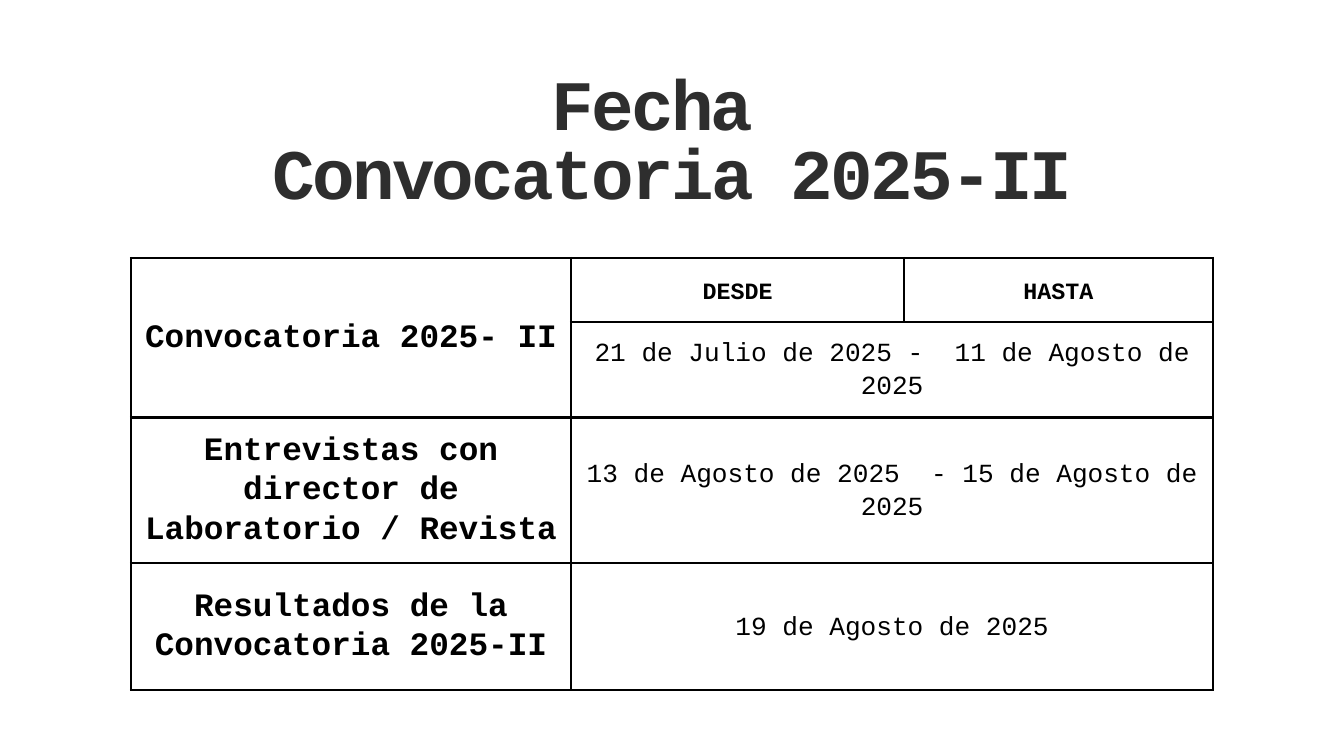
from lxml import etree
from pptx import Presentation
from pptx import util as u
from pptx.dml.color import RGBColor
from pptx.enum import text
from pptx.oxml.ns import qn

TITLE = ["Fecha ", "Convocatoria 2025-II"]
HEADERS = ["DESDE", "HASTA"]
STAGES = [
    ("Convocatoria 2025- II", "21 de Julio de 2025 -  11 de Agosto de 2025"),
    ("Entrevistas con director de Laboratorio / Revista",
     "13 de Agosto de 2025  - 15 de Agosto de 2025"),
    ("Resultados de la Convocatoria 2025-II", "19 de Agosto de 2025"),
]

FONT = "Courier New"
BLACK = RGBColor(0, 0, 0)
CHARCOAL = RGBColor(0x2E, 0x2E, 0x2E)
COLUMNS = [6.55, 4.95, 4.6]
ROWS = [0.95, 1.42, 1.89, 1.89]
TABLE_TOP = 3.84
SIDE_INSET = u.Inches(0.2)
END_INSET = u.Inches(0.21)
BORDER = u.Pt(3)
STAGE_STYLE = dict(size=35, leading=42, bold=True)
HEADER_STYLE = dict(size=25, leading=35, bold=True)
DATE_STYLE = dict(size=28, leading=35, bold=False)


def write(paragraph, wording, size, leading, bold, color=BLACK):
    paragraph.alignment = text.PP_ALIGN.CENTER
    paragraph.line_spacing = u.Pt(leading)
    run = paragraph.add_run()
    run.text = wording
    run.font.name = FONT
    run.font.size = u.Pt(size)
    run.font.bold = bold
    run.font.color.rgb = color
    return run


def draw_borders(cell):
    properties = cell._tc.get_or_add_tcPr()
    for position, side in enumerate(("lnL", "lnR", "lnT", "lnB")):
        line = etree.Element(qn(f"a:{side}"), w=str(BORDER))
        fill = etree.SubElement(line, qn("a:solidFill"))
        etree.SubElement(fill, qn("a:srgbClr"), val=str(BLACK))
        properties.insert(position, line)


def fill_cell(cell, wording, style):
    cell.vertical_anchor = text.MSO_ANCHOR.MIDDLE
    write(cell.text_frame.paragraphs[0], wording, **style)


deck = Presentation()
deck.slide_width, deck.slide_height = u.Inches(20), u.Inches(11.25)
slide = deck.slides.add_slide(deck.slide_layouts[6])

width = sum(COLUMNS)
schedule = slide.shapes.add_table(
    len(ROWS), len(COLUMNS), u.Inches((20 - width) / 2), u.Inches(TABLE_TOP),
    u.Inches(width), u.Inches(sum(ROWS))).table
schedule.first_row = schedule.horz_banding = False
for column, size in zip(schedule.columns, COLUMNS):
    column.width = u.Inches(size)
for row, size in zip(schedule.rows, ROWS):
    row.height = u.Inches(size)
for cell in schedule.iter_cells():
    cell.fill.background()
    cell.margin_left = cell.margin_right = SIDE_INSET
    cell.margin_top = cell.margin_bottom = END_INSET
    draw_borders(cell)

schedule.cell(0, 0).merge(schedule.cell(1, 0))
for column, header in enumerate(HEADERS, 1):
    fill_cell(schedule.cell(0, column), header, HEADER_STYLE)
for row, (stage, dates) in enumerate(STAGES, 1):
    schedule.cell(row, 1).merge(schedule.cell(row, 2))
    fill_cell(schedule.cell(0 if row == 1 else row, 0), stage, STAGE_STYLE)
    fill_cell(schedule.cell(row, 1), dates, DATE_STYLE)

title = slide.shapes.add_textbox(
    u.Inches(2.78), u.Inches(1.13), u.Inches(14.45), u.Inches(2.09)).text_frame
title.word_wrap = True
title.auto_size = text.MSO_AUTO_SIZE.SHAPE_TO_FIT_TEXT
title.margin_left = title.margin_right = title.margin_top = title.margin_bottom = 0
for index, wording in enumerate(TITLE):
    paragraph = title.add_paragraph() if index else title.paragraphs[0]
    run = write(paragraph, wording, 76, 73.7, True, CHARCOAL)
    run.font._element.set("spc", "-290")

deck.save("out.pptx")
